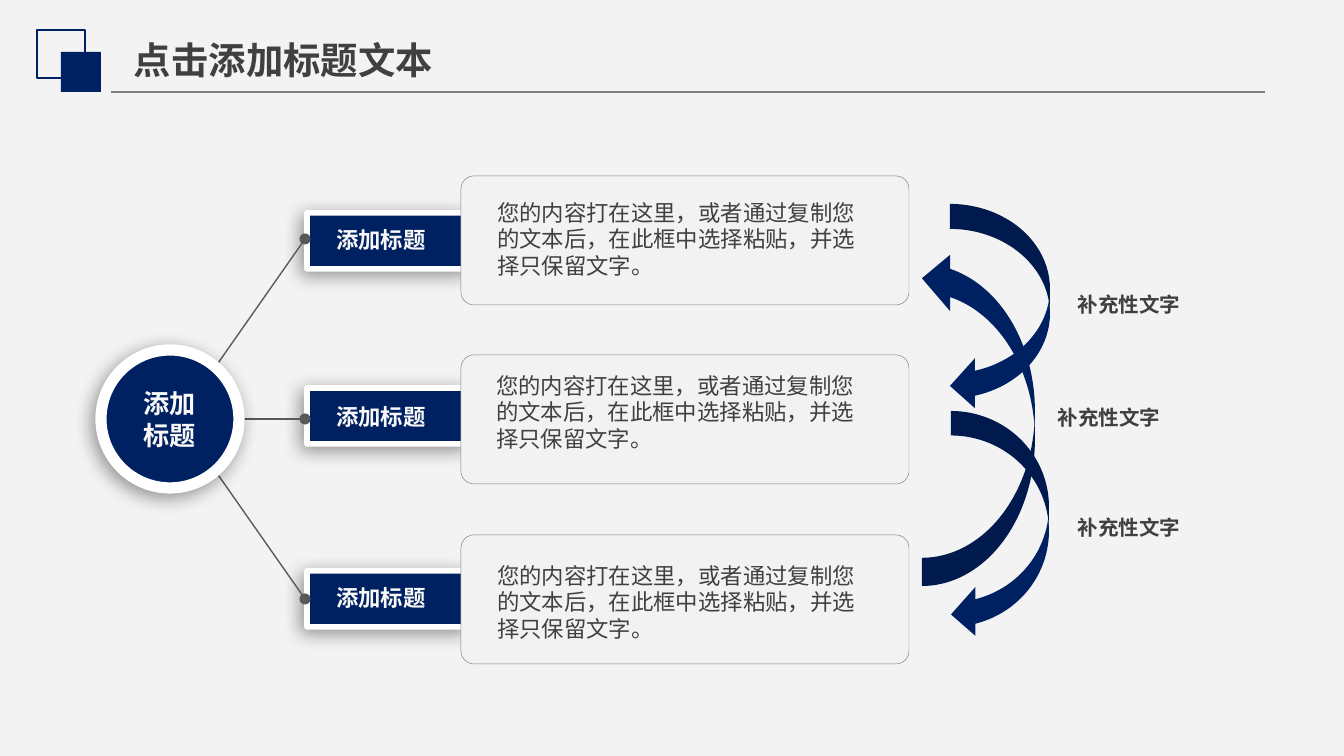
from lxml.etree import SubElement
from pptx import Presentation
from pptx.dml.color import RGBColor
from pptx.enum.shapes import MSO_CONNECTOR, MSO_SHAPE
from pptx.enum.text import MSO_ANCHOR, MSO_AUTO_SIZE, PP_ALIGN
from pptx.oxml import parse_xml
from pptx.oxml.ns import nsdecls, qn
from pptx.util import Emu, Pt

NAVY = RGBColor(0x00, 0x21, 0x61)
WHITE = RGBColor(0xFF, 0xFF, 0xFF)
OFF_WHITE = RGBColor(0xF8, 0xF8, 0xF8)
BACKGROUND = RGBColor(0xF3, 0xF3, 0xF3)
CARD_FILL = RGBColor(0xF2, 0xF2, 0xF2)
GREY = RGBColor(0x80, 0x80, 0x80)
SPOKE_GREY = RGBColor(0x59, 0x59, 0x59)
TEXT_DARK = RGBColor(0x40, 0x40, 0x40)

PX = 914400 / 134.4
CONTENT = "您的内容打在这里，或者通过复制您的文本后，在此框中选择粘贴，并选择只保留文字。"


def px(*lengths):
    return [Emu(round(length * PX)) for length in lengths]


class SlideBuilder:
    def __init__(self, slide):
        self.slide = slide
        slide.background.fill.solid()
        slide.background.fill.fore_color.rgb = BACKGROUND

    def shape(self, kind, box, fill=None, line=None, width=1, shadow=False):
        shape = self.slide.shapes.add_shape(kind, *px(*box))
        shape.shadow.inherit = False
        if fill is None:
            shape.fill.background()
        else:
            shape.fill.solid()
            shape.fill.fore_color.rgb = fill
        if line is None:
            shape.line.fill.background()
        else:
            shape.line.color.rgb = line
            shape.line.width = Pt(width)
        if shadow:
            effects = shape._element.spPr.find(qn("a:effectLst"))
            effects.append(parse_xml(
                f'<a:outerShdw {nsdecls("a")} blurRad="{Pt(10)}" dist="{Pt(3)}" '
                'dir="8100000" algn="tr" rotWithShape="0"><a:srgbClr val="000000">'
                '<a:alpha val="40000"/></a:srgbClr></a:outerShdw>'))
        return shape

    def line(self, start, end, color, dots=False):
        line = self.slide.shapes.add_connector(
            MSO_CONNECTOR.STRAIGHT, *px(*start, *end))
        line.line.color.rgb = color
        line.line.width = Pt(0.75)
        if dots:
            outline = line._element.spPr.find(qn("a:ln"))
            for tip in ("a:headEnd", "a:tailEnd"):
                SubElement(outline, qn(tip), type="oval")
        SubElement(line._element.spPr, qn("a:effectLst"))

    def set_text(self, shape, text, size, color, font="Calibri", bold=True,
                 align=PP_ALIGN.LEFT, anchor=MSO_ANCHOR.MIDDLE, insets=(9, 4)):
        frame = shape.text_frame
        frame.text = text
        frame.word_wrap = True
        frame.vertical_anchor = anchor
        side, edge = px(*insets)
        frame.margin_left = frame.margin_right = side
        frame.margin_top = frame.margin_bottom = edge
        for paragraph in frame.paragraphs:
            paragraph.alignment = align
            for run in paragraph.runs:
                run.font.name = font
                run.font.size = Pt(size)
                run.font.bold = bold
                run.font.color.rgb = color
                SubElement(run.font._element, qn("a:ea"), typeface=font)
        return frame

    def text(self, box, text, size, color, **style):
        textbox = self.slide.shapes.add_textbox(*px(*box))
        return self.set_text(textbox, text, size, color, **style)


def main():
    presentation = Presentation()
    presentation.slide_width, presentation.slide_height = px(1344, 756)
    page = SlideBuilder(presentation.slides.add_slide(presentation.slide_layouts[6]))

    # Header rule and squares
    page.line((111, 92), (1265, 92), GREY)
    page.shape(MSO_SHAPE.RECTANGLE, (37, 30, 48, 48), line=NAVY)
    page.shape(MSO_SHAPE.RECTANGLE, (61, 52, 40, 40), fill=NAVY)

    # Branch tags
    for tag_top, caption_top in ((213, 222), (388, 399), (571, 580)):
        page.shape(MSO_SHAPE.PENTAGON, (307, tag_top, 185, 56), NAVY, WHITE, 3, shadow=True)
        page.text((327, caption_top, 155, 36), "添加标题", 12, OFF_WHITE)

    # Spokes and hub
    for spoke_end in (239, 599, 419):
        page.line((179, 419), (305, spoke_end), SPOKE_GREY, dots=True)
    hub = page.shape(MSO_SHAPE.OVAL, (101, 350, 138, 138), NAVY, WHITE, 6, shadow=True)
    page.set_text(hub, "添加\n标题", 14, OFF_WHITE, align=PP_ALIGN.CENTER)

    # Cycle arrows
    for arrow_box in ((950, 204, 100, 207), (951, 411, 98, 228)):
        page.shape(MSO_SHAPE.CURVED_LEFT_ARROW, arrow_box, NAVY)
    return_arrow = page.shape(MSO_SHAPE.CURVED_LEFT_ARROW, (922, 250, 113, 336), NAVY)
    return_arrow.rotation = 180
    return_arrow._element.spPr.xfrm.set("flipH", "1")

    # Arrow labels
    for left, top in ((1068, 288), (1048, 401), (1068, 511)):
        label = page.text((left, top, 122, 34), "补充性文字", 11, TEXT_DARK, font="Arial",
                          align=PP_ALIGN.CENTER, anchor=MSO_ANCHOR.TOP)
        label.auto_size = MSO_AUTO_SIZE.SHAPE_TO_FIT_TEXT

    # Content cards
    for card_top, left, content_top in ((176, 488, 204), (355, 487, 377), (535, 488, 567)):
        card = page.shape(MSO_SHAPE.ROUNDED_RECTANGLE, (461, card_top, 448, 129),
                          CARD_FILL, GREY, 0.25)
        card.adjustments[0] = 0.1
        page.text((left, content_top, 391, 70), CONTENT, 12, TEXT_DARK, bold=False)

    # Title
    title = page.text((121, 30, 329, 59), "点击添加标题文本", 20, TEXT_DARK,
                      font="Noto Sans CJK SC", anchor=MSO_ANCHOR.TOP, insets=(13, 7))
    title.word_wrap = False
    title.auto_size = MSO_AUTO_SIZE.SHAPE_TO_FIT_TEXT

    presentation.save("out.pptx")


if __name__ == "__main__":
    main()
